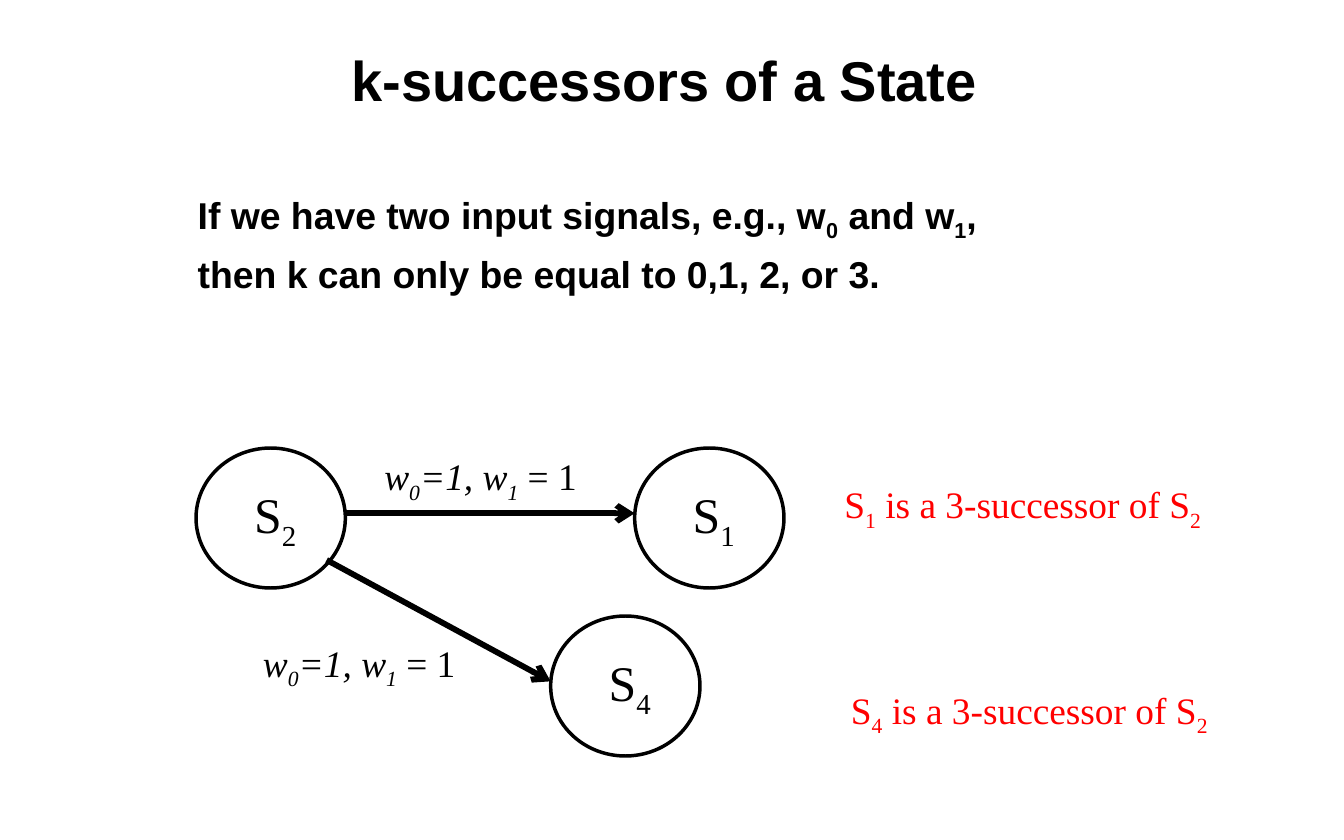
from lxml import etree
from pptx import Presentation
from pptx.dml.color import RGBColor
from pptx.enum.shapes import MSO_CONNECTOR, MSO_SHAPE
from pptx.enum.text import MSO_ANCHOR, PP_ALIGN
from pptx.oxml.ns import qn
from pptx.util import Inches, Pt

OVAL, LINE = MSO_SHAPE.OVAL, MSO_CONNECTOR.STRAIGHT
LEFT, MID = PP_ALIGN.LEFT, PP_ALIGN.CENTER
TOP, HALF = MSO_ANCHOR.TOP, MSO_ANCHOR.MIDDLE
INK = {"black": "000000", "white": "FFFFFF", "red": "FF0000"}
SANS, SERIF = "Arial", "Times New Roman"
COLS, ROWS = 144, 90
CELL = Inches(12) / COLS


def grid(*cells):
    """Turn grid cells into lengths."""
    return [round(cell * CELL) for cell in cells]


def tint(name):
    """Return a named colour."""
    return RGBColor.from_string(INK[name])


def write(frame, text, font=SERIF, size=24, color="black", bold=False,
          slant=False, align=LEFT, anchor=TOP, wrap=False, gap=0):
    """Write lines; underscores enclose subscripts, a bar ends the italics."""
    frame.word_wrap, frame.vertical_anchor = wrap, anchor
    for row, line in enumerate(text.split("\n")):
        para = frame.add_paragraph() if row else frame.paragraphs[0]
        para.alignment, para.space_before = align, Pt(gap)
        lead, _, rest = line.partition("|")
        for part, lean in ((lead, slant), (rest, False)):
            for spot, piece in enumerate(part.split("_")):
                if not piece:
                    continue
                run = para.add_run()
                run.text = piece
                run.font.name, run.font.size = font, Pt(size)
                run.font.bold, run.font.italic = bold, lean
                run.font.color.rgb = tint(color)
                if spot % 2:
                    run._r.get_or_add_rPr().set("baseline", "-25000")


def label(slide, box, text, **form):
    """Add a text box with formatted text."""
    write(slide.shapes.add_textbox(*grid(*box)).text_frame, text, **form)


def state(slide, box, text):
    """Add a state circle with its name."""
    disc = slide.shapes.add_shape(OVAL, *grid(*box))
    disc.shadow.inherit = False
    disc.fill.solid()
    disc.fill.fore_color.rgb = tint("white")
    disc.line.color.rgb = tint("black")
    disc.line.width = Pt(2.25)
    frame = disc.text_frame
    frame.margin_top = frame.margin_bottom = frame.margin_right = 0
    frame.margin_left = Inches(0.08)
    write(frame, text, size=32, align=MID, anchor=HALF)


def arrow(slide, ends):
    """Add a thick line with an open arrowhead."""
    link = slide.shapes.add_connector(LINE, *grid(*ends))
    link.line.color.rgb = tint("black")
    link.line.width = Pt(3.75)
    etree.SubElement(link.line._get_or_add_ln(), qn("a:tailEnd"), type="arrow")
    etree.SubElement(link._element.spPr, qn("a:effectLst"))


def header(slide, box):
    """Place the title and the premise below it."""
    left, top, wide, high = box
    label(slide, (left, top, wide, 9), "k-successors of a State ", font=SANS,
          size=36, bold=True, align=MID, anchor=HALF, wrap=True)
    label(slide, (left + 20, top + high / 2, 104, high / 2),
          "If we have two input signals, e.g., w_0_ and w_1_,\n"
          "then k can only be equal to 0,1, 2, or 3.",
          font=SANS, bold=True, wrap=True, gap=5)


def graph(slide, box):
    """Place the state circles, their arrows and the input labels."""
    left, top, wide, high = box
    disc_w, disc_h = 16, 15
    far, low = left + wide - disc_w, top + high - disc_h
    near = far - 9
    for x, y, name in ((left, top, "S_2_"), (far, top, "S_1_"),
                       (near, low, "S_4_")):
        state(slide, (x, y, disc_w, disc_h), name)
    arrow(slide, (left + disc_w, top + 7, far, top + 7))
    arrow(slide, (left + 14, top + 12, near, low + 7))
    for x, y in ((left + 19, top), (left + 6, top + 20)):
        label(slide, (x, y, 24, 6), "w_0_=1, w_1_| = 1", slant=True)


def notes(slide, box):
    """Place the conclusions in red."""
    left, top, wide, high = box
    for x, y, name in ((left, top, 1), (left + 0.7, top + high - 6, 4)):
        label(slide, (x, y, wide, 6), f"S_{name}_ is a 3-successor of S_2_",
              color="red")


def main():
    """Build and save the slide."""
    deck = Presentation()
    deck.slide_width, deck.slide_height = grid(COLS, ROWS)
    slide = deck.slides.add_slide(deck.slide_layouts[6])
    header(slide, (0, 4, COLS, 32))
    graph(slide, (21, 48, 63, 33))
    notes(slide, (89.3, 51, 41.3, 28))
    deck.save("out.pptx")


if __name__ == "__main__":
    main()
